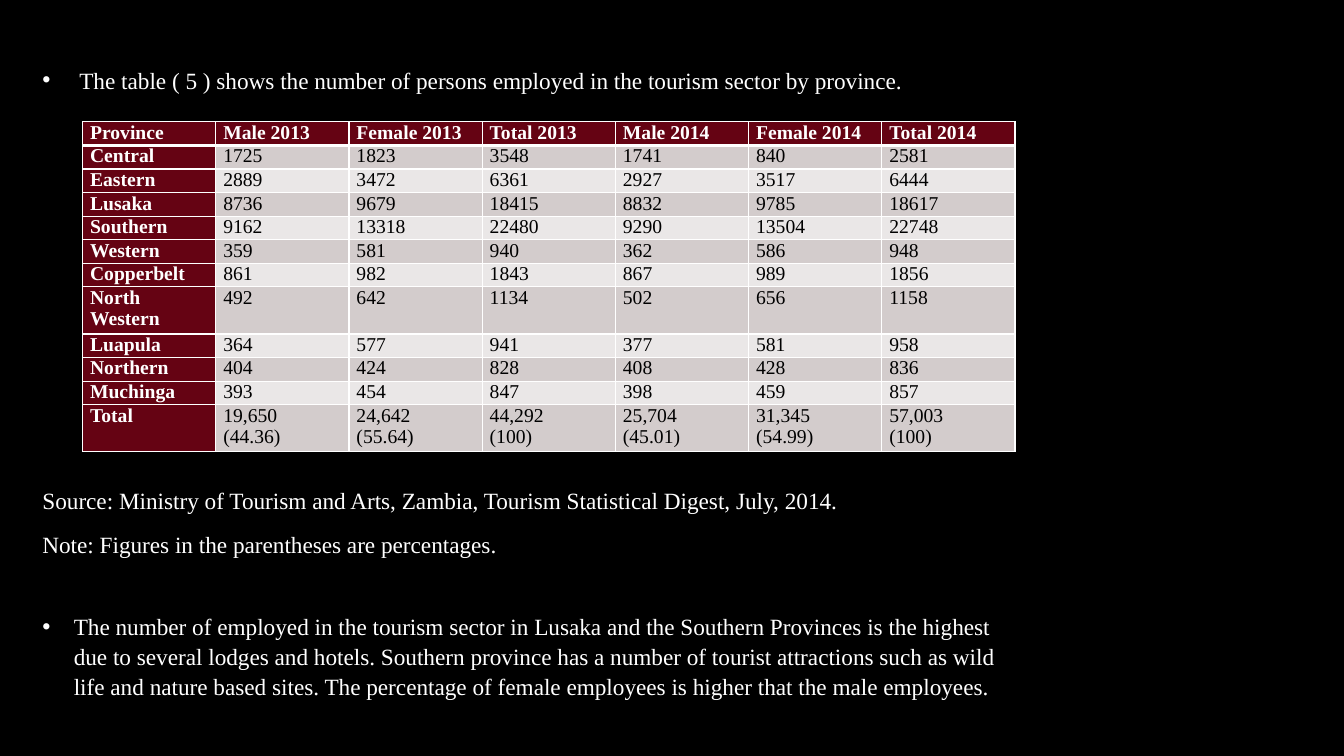
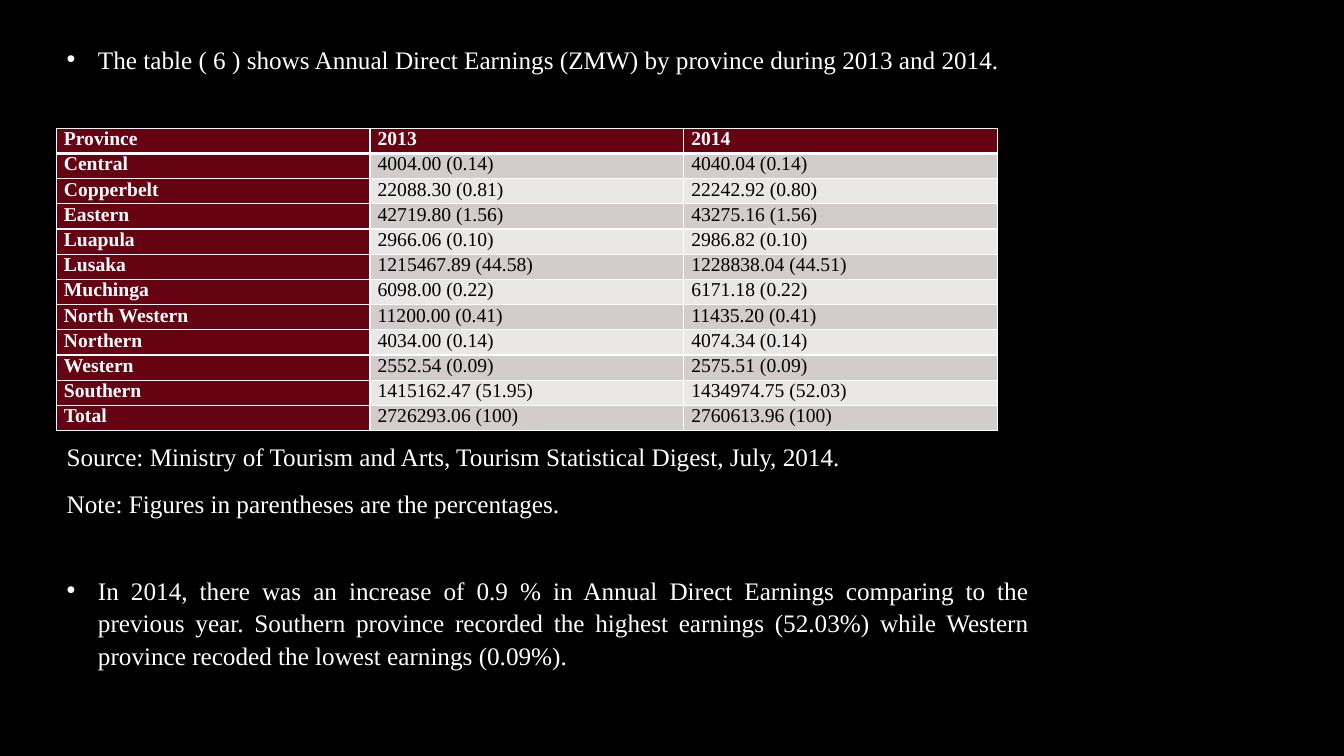
from lxml.etree import SubElement
from pptx import Presentation
from pptx.enum.text import PP_ALIGN
from pptx.oxml.ns import qn
from pptx.util import Cm, Pt

FONT = "Times New Roman"
BLACK = "000000"
WHITE = "FFFFFF"
MAROON = "650313"
BANDS = ["D3CCCC", "EAE7E7"]
BULLET_INDENT = 0.79
TEXT_WIDTH = 24.26

# Lengths are in centimetres; each text is (top, bullet indent, paragraphs).
SLIDES = [
    {
        "text_left": 1.07,
        "text_size": 16.6,
        "alignment": PP_ALIGN.LEFT,
        "texts": [
            (1.61, 0.93, ["The table ( 5 ) shows the number of persons employed in the tourism sector by province."]),
            (12.2, 0, [
                "Source: Ministry of Tourism and Arts, Zambia, Tourism Statistical Digest, July, 2014.",
                "Note: Figures in the parentheses are percentages.",
            ]),
            (15.37, BULLET_INDENT, [
                "The number of employed in the tourism sector in Lusaka and the Southern Provinces is the highest "
                "due to several lodges and hotels. Southern province has a number of tourist attractions such as "
                "wild life and nature based sites. The percentage of female employees is higher that the male "
                "employees.",
            ]),
        ],
        "table_box": (2.08, 3.07, 23.5, 6.48),
        "two_line_rows": ["North Western", "Total"],
        "rows": [
            ["Province", "Male 2013", "Female 2013", "Total 2013", "Male 2014", "Female 2014", "Total 2014"],
            ["Central", "1725", "1823", "3548", "1741", "840", "2581"],
            ["Eastern", "2889", "3472", "6361", "2927", "3517", "6444"],
            ["Lusaka", "8736", "9679", "18415", "8832", "9785", "18617"],
            ["Southern", "9162", "13318", "22480", "9290", "13504", "22748"],
            ["Western", "359", "581", "940", "362", "586", "948"],
            ["Copperbelt", "861", "982", "1843", "867", "989", "1856"],
            ["North Western", "492", "642", "1134", "502", "656", "1158"],
            ["Luapula", "364", "577", "941", "377", "581", "958"],
            ["Northern", "404", "424", "828", "408", "428", "836"],
            ["Muchinga", "393", "454", "847", "398", "459", "857"],
            ["Total", "19,650\n(44.36)", "24,642\n(55.64)", "44,292\n(100)",
             "25,704\n(45.01)", "31,345\n(54.99)", "57,003\n(100)"],
        ],
    },
    {
        "text_left": 1.68,
        "text_size": 18,
        "alignment": PP_ALIGN.JUSTIFY,
        "texts": [
            (1.05, BULLET_INDENT, [
                "The table ( 6 ) shows Annual Direct Earnings (ZMW) by province during 2013 and 2014.",
            ]),
            (11.07, 0, [
                "Source: Ministry of Tourism and Arts, Tourism Statistical Digest, July, 2014.",
                "Note: Figures in parentheses are the percentages.",
            ]),
            (14.43, BULLET_INDENT, [
                "In 2014, there was an increase of 0.9 % in Annual Direct Earnings comparing to the previous year. "
                "Southern province recorded the highest earnings (52.03%) while Western province recoded the "
                "lowest earnings (0.09%).",
            ]),
        ],
        "table_box": (1.42, 3.23, 23.72, 7.62),
        "two_line_rows": [],
        "rows": [
            ["Province", "2013", "2014"],
            ["Central", "4004.00 (0.14)", "4040.04 (0.14)"],
            ["Copperbelt", "22088.30 (0.81)", "22242.92 (0.80)"],
            ["Eastern", "42719.80 (1.56)", "43275.16 (1.56)"],
            ["Luapula", "2966.06 (0.10)", "2986.82 (0.10)"],
            ["Lusaka", "1215467.89 (44.58)", "1228838.04 (44.51)"],
            ["Muchinga", "6098.00 (0.22)", "6171.18 (0.22)"],
            ["North Western", "11200.00 (0.41)", "11435.20 (0.41)"],
            ["Northern", "4034.00 (0.14)", "4074.34 (0.14)"],
            ["Western", "2552.54 (0.09)", "2575.51 (0.09)"],
            ["Southern", "1415162.47 (51.95)", "1434974.75 (52.03)"],
            ["Total", "2726293.06 (100)", "2760613.96 (100)"],
        ],
    },
]


def paint(fill, colour):
    """Make a shape, cell, background or font fill solid."""
    fill.solid()
    fill.fore_color.rgb = colour_value(colour)


def colour_value(colour):
    from_hex = RGBColor.from_string
    return from_hex(colour)


from pptx.dml.color import RGBColor

presentation = Presentation()
presentation.slide_width = Cm(33.87)
presentation.slide_height = Cm(19.05)

for content in SLIDES:
    slide = presentation.slides.add_slide(presentation.slide_layouts[6])
    paint(slide.background.fill, BLACK)

    for top, indent, lines in content["texts"]:
        box = slide.shapes.add_textbox(Cm(content["text_left"]), Cm(top), Cm(TEXT_WIDTH), Cm(2.2))
        frame = box.text_frame
        frame.word_wrap = True
        frame.margin_left = frame.margin_right = frame.margin_top = frame.margin_bottom = 0
        for index, line in enumerate(lines):
            paragraph = frame.add_paragraph() if index else frame.paragraphs[0]
            paragraph.alignment = content["alignment"]
            paragraph.line_spacing = 1.08
            paragraph.space_after = Pt(10)
            if indent:
                properties = paragraph._p.get_or_add_pPr()
                properties.set("marL", str(Cm(indent)))
                properties.set("indent", str(-Cm(indent)))
                bullet_colour = SubElement(properties, qn("a:buClr"))
                SubElement(bullet_colour, qn("a:srgbClr"), val=WHITE)
                SubElement(properties, qn("a:buFont"), typeface="Arial")
                SubElement(properties, qn("a:buChar"), char="•")
            run = paragraph.add_run()
            run.text = line
            run.font.name = FONT
            run.font.size = Pt(content["text_size"])
            paint(run.font.fill, WHITE)

    rows = content["rows"]
    left, top, width, height = map(Cm, content["table_box"])
    table = slide.shapes.add_table(len(rows), len(rows[0]), left, top, width, height).table
    table.horz_banding = False
    table.first_col = True
    for row_index, values in enumerate(rows):
        if values[0] in content["two_line_rows"]:
            table.rows[row_index].height *= 2
        for column_index, value in enumerate(values):
            cell = table.cell(row_index, column_index)
            cell.margin_left = cell.margin_right = Cm(0.19)
            cell.margin_top = cell.margin_bottom = 0
            is_header = row_index == 0 or column_index == 0

            border_widths = {
                "a:lnL": 1,
                "a:lnR": 1,
                "a:lnT": 3 if row_index == 1 else 1,
                "a:lnB": 3 if row_index == 0 else 1,
            }
            for tag, points in border_widths.items():
                border = SubElement(cell._tc.get_or_add_tcPr(), qn(tag), w=str(Pt(points)))
                SubElement(SubElement(border, qn("a:solidFill")), qn("a:srgbClr"), val=WHITE)
            paint(cell.fill, MAROON if is_header else BANDS[(row_index - 1) % 2])

            for line_index, line in enumerate(value.split("\n")):
                frame = cell.text_frame
                paragraph = frame.add_paragraph() if line_index else frame.paragraphs[0]
                run = paragraph.add_run()
                run.text = line
                run.font.name = FONT
                run.font.size = Pt(14)
                run.font.bold = is_header
                paint(run.font.fill, WHITE if is_header else BLACK)

presentation.save("out.pptx")
